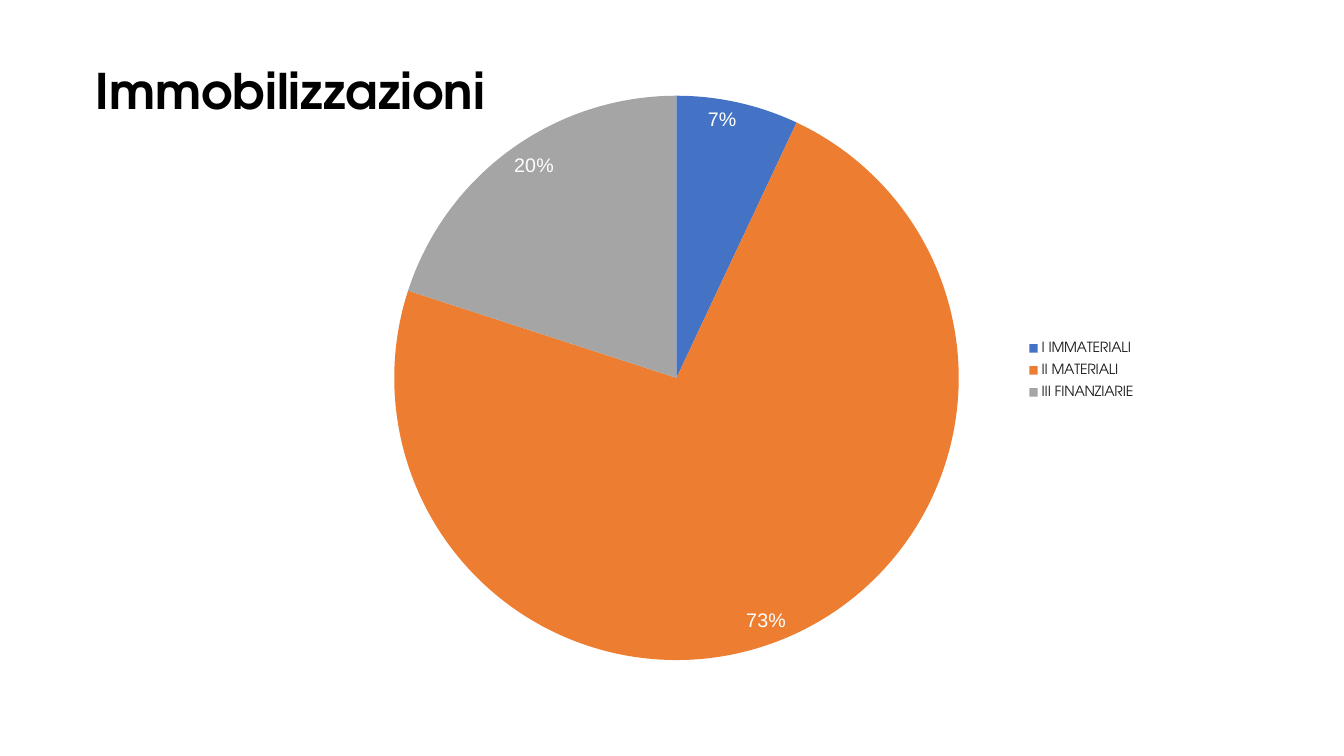
from dataclasses import dataclass

import pptx
import pptx.chart.data
import pptx.dml.color
import pptx.enum.chart
import pptx.enum.text
import pptx.oxml
import pptx.oxml.ns
import pptx.util

Inches = pptx.util.Inches
COLORS = {
    "background": "FFFFFF", "title": "000000", "legend": "1A1A1A", "label": "FFFFFF",
    "intangible": "4472C4", "tangible": "ED7D31", "financial": "A5A5A5",
}
HEADING_FONT = "TeX Gyre Adventor"
FORMATS = {
    "title": {"name": HEADING_FONT, "size": pptx.util.Pt(35), "bold": True},
    "legend": {"name": HEADING_FONT, "size": pptx.util.Pt(10), "bold": False},
    "label": {"name": "Arial", "size": pptx.util.Pt(14), "bold": False},
}


@dataclass
class Box:
    left: float
    top: float
    width: float
    height: float

    def lengths(self) -> list:
        return [Inches(v) for v in (self.left, self.top, self.width, self.height)]


@dataclass
class Asset:
    name: str
    percent: int
    color: str


ASSETS = [
    Asset("I IMMATERIALI", 7, "intangible"),
    Asset("II MATERIALI", 73, "tangible"),
    Asset("III FINANZIARIE", 20, "financial"),
]
TITLE_BOX = Box(0.85, 0.62, 11.65, 1.09)
CHART_BOX = Box(3.2, 0.81, 8.23, 5.88)
PIE_BOX = Box(3.91, 0.95, 5.6, 5.6)
LEGEND_BOX = Box(10.1, 3.3, 1.25, 0.75)


def rgb(key: str) -> pptx.dml.color.RGBColor:
    return pptx.dml.color.RGBColor.from_string(COLORS[key])


def style(font, role: str) -> None:
    for attribute, value in FORMATS[role].items():
        setattr(font, attribute, value)
    font.color.rgb = rgb(role)


def layout_xml(box: Box, inner: bool):
    """Express a box on the slide as a manual layout within the chart."""
    target = '<c:layoutTarget val="inner"/>' if inner else ""
    fractions = {
        "x": (box.left - CHART_BOX.left) / CHART_BOX.width,
        "y": (box.top - CHART_BOX.top) / CHART_BOX.height,
        "w": box.width / CHART_BOX.width,
        "h": box.height / CHART_BOX.height,
    }
    modes = '<c:xMode val="edge"/><c:yMode val="edge"/>'
    sizes = "".join(f'<c:{k} val="{v:.4f}"/>' for k, v in fractions.items())
    return pptx.oxml.parse_xml(
        f'<c:layout {pptx.oxml.ns.nsdecls("c")}><c:manualLayout>'
        f"{target}{modes}{sizes}</c:manualLayout></c:layout>"
    )


def place(parent, box: Box, index: int, inner: bool = False) -> None:
    for old_layout in parent.findall(pptx.oxml.ns.qn("c:layout")):
        parent.remove(old_layout)
    parent.insert(index, layout_xml(box, inner))


def add_title(slide) -> None:
    frame = slide.shapes.add_textbox(*TITLE_BOX.lengths()).text_frame
    frame.word_wrap = True
    frame.vertical_anchor = pptx.enum.text.MSO_ANCHOR.TOP
    paragraph = frame.paragraphs[0]
    paragraph.text = "Immobilizzazioni"
    paragraph.line_spacing = 0.9
    style(paragraph.font, "title")


def add_pie(slide) -> None:
    data = pptx.chart.data.CategoryChartData()
    data.categories = [asset.name for asset in ASSETS]
    data.add_series("Series 1", [asset.percent for asset in ASSETS])
    chart = slide.shapes.add_chart(
        pptx.enum.chart.XL_CHART_TYPE.PIE, *CHART_BOX.lengths(), data
    ).chart
    chart.has_title = False
    chart.font.name = "Arial"
    chart.font.size = pptx.util.Pt(10)
    chart.has_legend = True
    chart.legend.position = pptx.enum.chart.XL_LEGEND_POSITION.RIGHT
    chart.legend.include_in_layout = False
    style(chart.legend.font, "legend")

    plot = chart.plots[0]
    plot.vary_by_categories = True
    for index, asset in enumerate(ASSETS):
        fill = plot.series[0].points[index].format.fill
        fill.solid()
        fill.fore_color.rgb = rgb(asset.color)
    plot.has_data_labels = True
    labels = plot.data_labels
    label_formats = {
        "show_percentage": True, "show_value": False,
        "number_format": "0%", "number_format_is_linked": False,
        "position": pptx.enum.chart.XL_LABEL_POSITION.INSIDE_END,
    }
    for attribute, value in label_formats.items():
        setattr(labels, attribute, value)
    style(labels.font, "label")

    chart_element = chart.element.find(pptx.oxml.ns.qn("c:chart"))
    place(chart_element.find(pptx.oxml.ns.qn("c:plotArea")), PIE_BOX, 0, inner=True)
    place(chart_element.find(pptx.oxml.ns.qn("c:legend")), LEGEND_BOX, 1)


def main() -> None:
    deck = pptx.Presentation()
    deck.slide_width, deck.slide_height = Inches(13.33), Inches(7.5)
    slide = deck.slides.add_slide(deck.slide_layouts[6])
    slide.background.fill.solid()
    slide.background.fill.fore_color.rgb = rgb("background")
    add_title(slide)
    add_pie(slide)
    deck.save("out.pptx")


if __name__ == "__main__":
    main()
